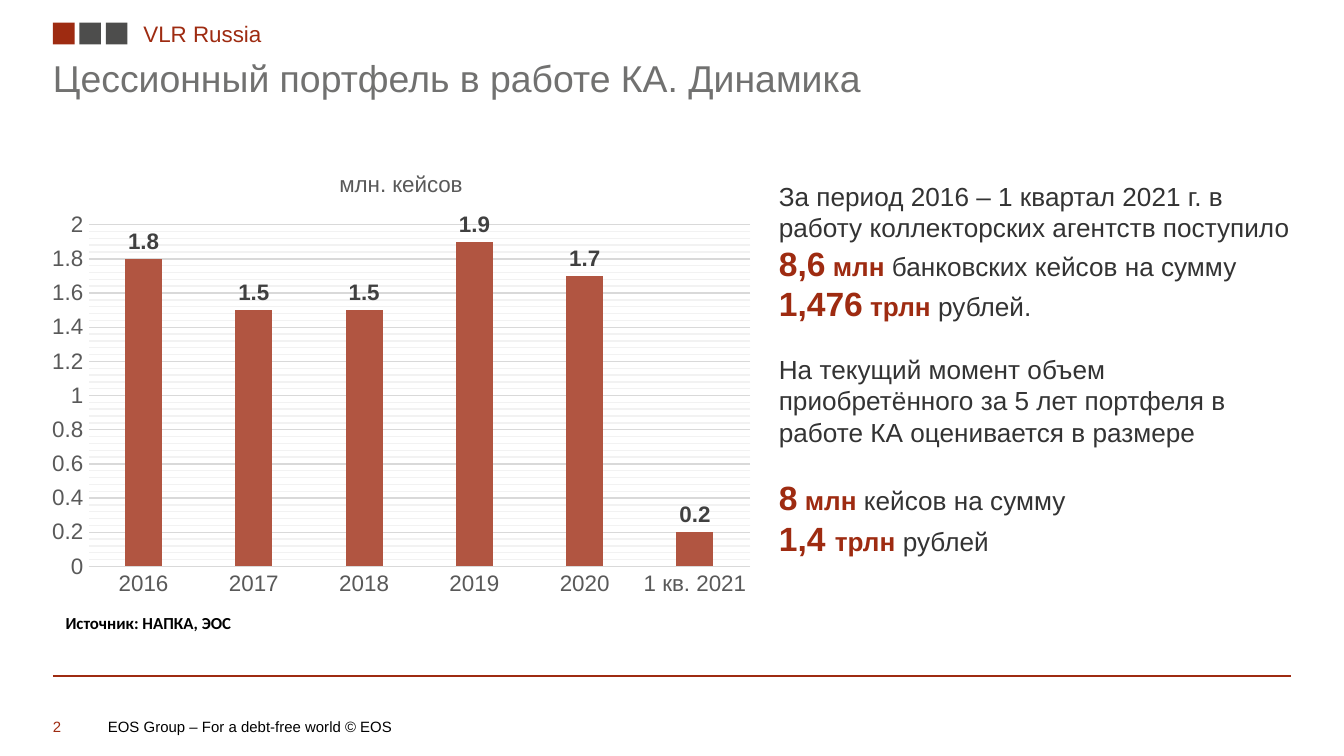
from copy import deepcopy
from lxml.etree import SubElement
from pptx import Presentation
from pptx.chart.data import CategoryChartData as Data
from pptx.dml.color import RGBColor as RGB
from pptx.enum.chart import XL_CHART_TYPE as Kind, XL_LABEL_POSITION as Spot, XL_TICK_MARK as Tick
from pptx.enum.shapes import MSO_CONNECTOR as Link, MSO_SHAPE as Form
from pptx.enum.text import MSO_ANCHOR as Anchor, MSO_AUTO_SIZE as Fit, PP_ALIGN as Align
from pptx.oxml.ns import qn
from pptx.util import Cm, Pt

HUES = {"red": "9E2B11", "bar": "B15541", "dark": "4D4D4C", "title": "717170",
        "body": "333333", "axis": "595959", "label": "404040", "grid": "D9D9D9",
        "fine": "F2F2F2", "black": "000000"}
YEARS = ["2016", "2017", "2018", "2019", "2020", "1 кв. 2021"]
CASES = [1.8, 1.5, 1.5, 1.9, 1.7, 0.2]
STORY = [
    (0, [("За период 2016 – 1 квартал 2021 г. в работу коллекторских агентств поступило ", "text"),
         ("8,6", "big"), (" ", "text"), ("млн", "key"), (" банковских кейсов на сумму ", "text"),
         ("1,476", "big"), (" трлн ", "key"), ("рублей.", "text")]),
    (16, [("На текущий момент объем приобретённого за 5 лет портфеля в работе КА "
           "оценивается в размере", "text")]),
    (16, [("8", "big"), (" ", "text"), ("млн", "key"), (" кейсов на сумму", "text")]),
    (0, [("1,4 ", "big"), ("трлн", "key"), (" рублей", "text")]),
]
LOOKS = {"text": (14, "body", False), "key": (14, "red", True), "big": (18, "red", True)}


def paint(name):
    """Return the named colour."""
    return RGB.from_string(HUES[name])


def style(font, size, hue, bold=False, face="Arial"):
    """Set size, colour, weight and face of a font."""
    font.size, font.bold, font.name = Pt(size), bold, face
    font.color.rgb = paint(hue)


def frame(shape, inset=True, anchor=Anchor.TOP):
    """Set wrapping, anchor and insets, and return the text frame."""
    text = shape.text_frame
    text.word_wrap, text.auto_size = True, Fit.NONE
    text.vertical_anchor = anchor
    if not inset:
        text.margin_left = text.margin_right = text.margin_top = text.margin_bottom = 0
    return text


def write(slide, box, words, size, hue, bold=False, face="Arial", **kind):
    """Add a one-line text box and return its paragraph."""
    text = frame(slide.shapes.add_textbox(*map(Cm, box)), **kind)
    line = text.paragraphs[0]
    line.text = words
    style(line.font, size, hue, bold, face)
    return line


def add_head(slide, x, y, width):
    """Place the squares, the sender and the title."""
    side, step = 0.41, 0.5
    for i, hue in enumerate(["red", "dark", "dark"]):
        tile = slide.shapes.add_shape(Form.RECTANGLE, Cm(x + i * step), Cm(y), Cm(side), Cm(side))
        tile.shadow.inherit = False
        tile.fill.solid()
        tile.fill.fore_color.rgb = paint(hue)
        tile.line.fill.background()
    write(slide, (x + 1.46, y - 0.18, 3.5, 0.76), "VLR Russia", 12, "red")
    title = slide.shapes.title
    title.left, title.top, title.width, title.height = map(Cm, (x, y + 0.61, width, 0.86))
    line = frame(title, inset=False).paragraphs[0]
    line.text = "Цессионный портфель в работе КА. Динамика"
    line.alignment = Align.LEFT
    style(line.font, 20, "title")


def add_grid(axis):
    """Draw the major grid of an axis and a paler minor one."""
    axis.has_major_gridlines = axis.has_minor_gridlines = True
    line = axis.major_gridlines.format.line
    line.width = Pt(0.75)
    line.color.rgb = paint("grid")
    root = axis._element
    look = deepcopy(root.find(qn("c:majorGridlines")).find(qn("c:spPr")))
    next(look.iter(qn("a:srgbClr"))).set("val", HUES["fine"])
    root.find(qn("c:minorGridlines")).append(look)


def add_cases(slide, x, y, width, height):
    """Place the column chart with its source line below."""
    data = Data()
    data.categories = YEARS
    data.add_series("млн. кейсов", CASES)
    chart = slide.shapes.add_chart(Kind.COLUMN_CLUSTERED, *map(Cm, (x, y, width, height)), data).chart
    style(chart.font, 10, "black")
    chart.has_legend = False
    chart.has_title = True
    head = chart.chart_title.text_frame.paragraphs[0]
    head.text = "млн. кейсов"
    style(head.font, 12, "axis")
    plot = chart.plots[0]
    plot.gap_width, plot.vary_by_categories = 199, False
    bars = plot.series[0].format.fill
    bars.solid()
    bars.fore_color.rgb = paint("bar")
    plot.has_data_labels = True
    tags = plot.data_labels
    tags.show_value, tags.position = True, Spot.OUTSIDE_END
    style(tags.font, 12, "label", True)
    across, up = chart.category_axis, chart.value_axis
    for axis in (across, up):
        axis.major_tick_mark = axis.minor_tick_mark = Tick.NONE
        style(axis.tick_labels.font, 12, "axis")
    up.minimum_scale, up.maximum_scale = 0, 2
    up.major_unit, up.minor_unit = 0.2, 0.04
    up.format.line.fill.background()
    add_grid(up)
    across.format.line.color.rgb = paint("grid")
    across.format.line.width = Pt(0.75)
    note = write(slide, (x + 0.28, y + height, 3.91, 0.66), "Источник: НАПКА, ЭОС",
                 9, "black", True, "Calibri")
    note.line_spacing, note.space_after = 1.07, Pt(3)


def add_story(slide, *box):
    """Place the text with its key figures."""
    text = frame(slide.shapes.add_textbox(*map(Cm, box)))
    for i, (gap, runs) in enumerate(STORY):
        line = text.add_paragraph() if i else text.paragraphs[0]
        if gap:
            line.space_before = Pt(gap)
        for words, look in runs:
            run = line.add_run()
            run.text = words
            style(run.font, *LOOKS[look])


def add_foot(slide, x, y, width):
    """Place the rule, the page number and the copyright line."""
    rule = slide.shapes.add_connector(Link.STRAIGHT, Cm(x), Cm(y), Cm(x + width), Cm(y))
    rule.line.color.rgb = paint("red")
    rule.line.width = Pt(0.75)
    SubElement(rule.element.spPr, qn("a:effectLst"))
    low, tall, tab = y + 0.78, 0.33, 1.04
    write(slide, (x, low, tab, tall), "2", 8, "red", inset=False, anchor=Anchor.MIDDLE)
    write(slide, (x + tab, low, 20, tall), "EOS Group – For a debt-free world © EOS",
          8, "black", inset=False, anchor=Anchor.MIDDLE)


def main():
    """Build and save the slide."""
    deck = Presentation()
    deck.slide_width, deck.slide_height = Cm(25.4), Cm(14.29)
    slide = deck.slides.add_slide(deck.slide_layouts[5])
    edge, wide = 1, 23.4
    add_head(slide, edge, 0.43, wide)
    add_cases(slide, 0.71, 2.84, 13.74, 8.59)
    add_story(slide, 14.47, 3.28, 10.4, 8.7)
    add_foot(slide, edge, 12.78, wide)
    deck.save("out.pptx")


if __name__ == "__main__":
    main()
